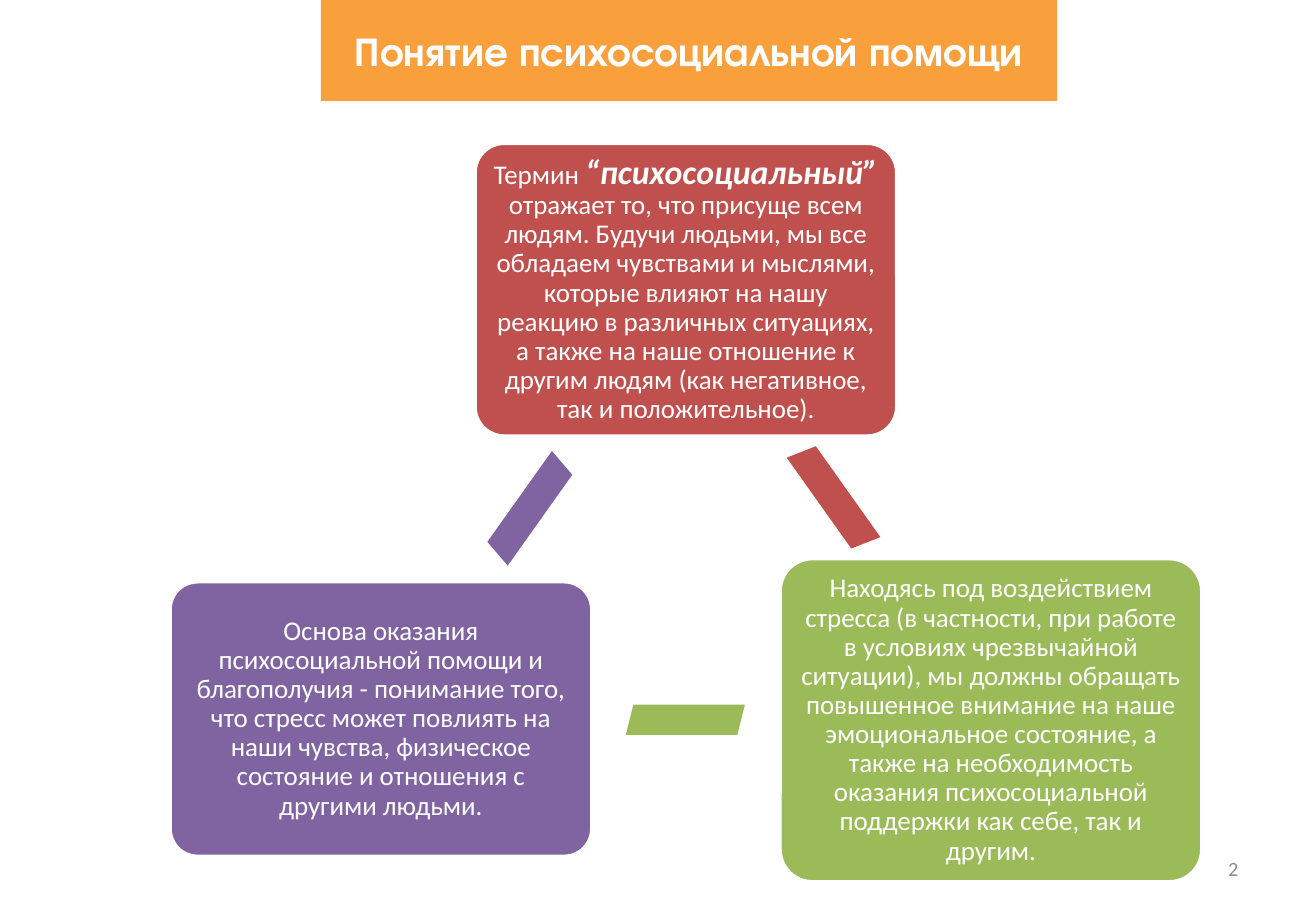
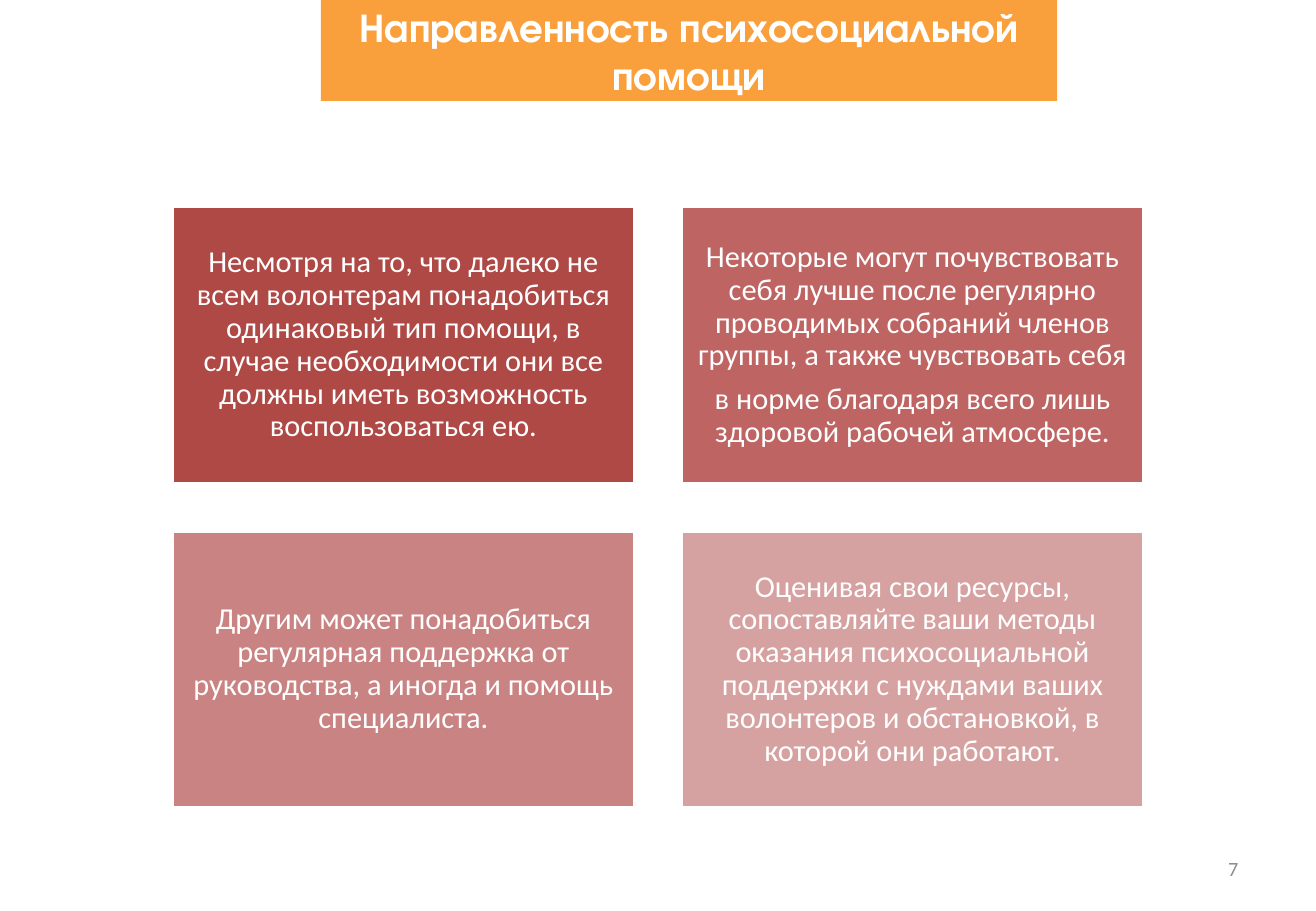
from pptx import Presentation
from pptx.dml.color import RGBColor
from pptx.enum.shapes import MSO_SHAPE
from pptx.enum.text import MSO_ANCHOR, MSO_AUTO_SIZE, PP_ALIGN
from pptx.util import Inches, Pt

WHITE = "FFFFFF"
ORANGE = "F99F3C"
GRAY = "8C8C8C"
RED = "C0504D"
GREEN = "9BBB59"
PURPLE = "8064A2"
BODY_FONT = "Calibri"
TITLE_FONT = "TeX Gyre Adventor"


def color(hex_string):
    return RGBColor.from_string(hex_string)


def add_block(slide, kind, position, fill, paragraphs, size):
    shape = slide.shapes.add_shape(kind, *map(Inches, position))
    shape.shadow.inherit = False
    shape.fill.solid()
    shape.fill.fore_color.rgb = color(fill)
    shape.line.color.rgb = color(WHITE)
    shape.line.width = Pt(2)
    frame = shape.text_frame
    frame.word_wrap = True
    frame.vertical_anchor = MSO_ANCHOR.MIDDLE
    frame.margin_left = frame.margin_right = Inches(0.07)
    frame.margin_top = frame.margin_bottom = Inches(0.07)
    for index, runs in enumerate(paragraphs):
        paragraph = frame.add_paragraph() if index else frame.paragraphs[0]
        paragraph.alignment = PP_ALIGN.CENTER
        paragraph.line_spacing = 0.9
        paragraph.space_after = Pt(size * 0.35)
        paragraph.font.name = BODY_FONT
        paragraph.font.size = Pt(size)
        paragraph.font.color.rgb = color(WHITE)
        for text, emphasized in runs:
            run = paragraph.add_run()
            run.text = text
            if emphasized:
                run.font.size = Pt(20)
                run.font.bold = True
                run.font.italic = True
    return shape


presentation = Presentation()
presentation.slide_width = Inches(10.83)
presentation.slide_height = Inches(7.5)

slides = []
for title_text, number in [
    ("Понятие психосоциальной помощи", "2"),
    ("Направленность психосоциальной помощи", "7"),
]:
    slide = presentation.slides.add_slide(presentation.slide_layouts[5])
    slides.append(slide)

    title = slide.shapes.title
    title.left, title.top = Inches(2.64), Inches(0)
    title.width, title.height = Inches(6.06), Inches(0.83)
    title.fill.solid()
    title.fill.fore_color.rgb = color(ORANGE)
    title.text_frame.text = title_text
    title.text_frame.auto_size = MSO_AUTO_SIZE.NONE
    title.text_frame.vertical_anchor = MSO_ANCHOR.MIDDLE
    paragraph = title.text_frame.paragraphs[0]
    paragraph.alignment = PP_ALIGN.CENTER
    paragraph.font.name = TITLE_FONT
    paragraph.font.size = Pt(24)
    paragraph.font.bold = True
    paragraph.font.color.rgb = color(WHITE)

    page_number = slide.shapes.add_textbox(Inches(7.76), Inches(6.95), Inches(2.53), Inches(0.4))
    page_number.text_frame.word_wrap = True
    page_number.text_frame.vertical_anchor = MSO_ANCHOR.MIDDLE
    page_number.text_frame.text = number
    paragraph = page_number.text_frame.paragraphs[0]
    paragraph.alignment = PP_ALIGN.RIGHT
    paragraph.font.name = BODY_FONT
    paragraph.font.size = Pt(12)
    paragraph.font.color.rgb = color(GRAY)

concept_slide, focus_slide = slides

concepts = [
    ((3.91, 1.18, 3.47, 2.41), RED, [
        ("Термин ", False),
        ("“психосоциальный” ", True),
        ("отражает то, что присуще всем людям. Будучи людьми, мы все обладаем "
         "чувствами и мыслями, которые влияют на нашу реакцию в различных ситуациях, "
         "а также на наше отношение к другим людям (как негативное, так и "
         "положительное).", False),
    ]),
    ((6.42, 4.6, 3.47, 2.66), GREEN, [
        ("Находясь под воздействием стресса (в частности, при работе в условиях "
         "чрезвычайной ситуации), мы должны обращать повышенное внимание на наше "
         "эмоциональное состояние, а также на необходимость оказания "
         "психосоциальной поддержки как себе, так и другим.", False),
    ]),
    ((1.4, 4.79, 3.47, 2.26), PURPLE, [
        ("Основа оказания психосоциальной помощи и благополучия - понимание того, "
         "что стресс может повлиять на наши чувства, физическое состояние и "
         "отношения с другими людьми.", False),
    ]),
]
for position, fill, runs in concepts:
    block = add_block(concept_slide, MSO_SHAPE.ROUNDED_RECTANGLE, position, fill, [runs], 16)
    block.adjustments[0] = 0.1

for left, top, rotation, fill in [
    (6.37, 3.97, 54.6, RED),
    (5.15, 5.8, 180, GREEN),
    (3.87, 4.06, 305.4, PURPLE),
]:
    link = concept_slide.shapes.add_shape(
        MSO_SHAPE.PARALLELOGRAM, Inches(left), Inches(top), Inches(0.98), Inches(0.25))
    link.shadow.inherit = False
    link.rotation = rotation
    link.fill.solid()
    link.fill.fore_color.rgb = color(fill)
    link.line.fill.background()

directions = [
    ("AE4946", [
        "Несмотря на то, что далеко не всем волонтерам понадобиться одинаковый тип "
        "помощи, в случае необходимости они все должны иметь возможность "
        "воспользоваться ею.",
    ]),
    ("BE6462", [
        "Некоторые могут почувствовать себя лучше после регулярно проводимых "
        "собраний членов группы, а также чувствовать себя",
        "в норме благодаря всего лишь здоровой рабочей атмосфере.",
    ]),
    ("C98382", [
        "Другим может понадобиться регулярная поддержка от руководства, а иногда и "
        "помощь специалиста.",
    ]),
    ("D6A2A1", [
        "Оценивая свои ресурсы, сопоставляйте ваши методы оказания психосоциальной "
        "поддержки с нуждами ваших волонтеров и обстановкой, в которой они работают.",
    ]),
]
card_width, card_height, gap = 3.8, 2.28, 0.39
for index, (fill, texts) in enumerate(directions):
    row, column = divmod(index, 2)
    position = (1.42 + column * (card_width + gap), 1.7 + row * (card_height + gap),
                card_width, card_height)
    add_block(focus_slide, MSO_SHAPE.RECTANGLE, position, fill,
              [[(text, False)] for text in texts], 18)

presentation.save("out.pptx")
